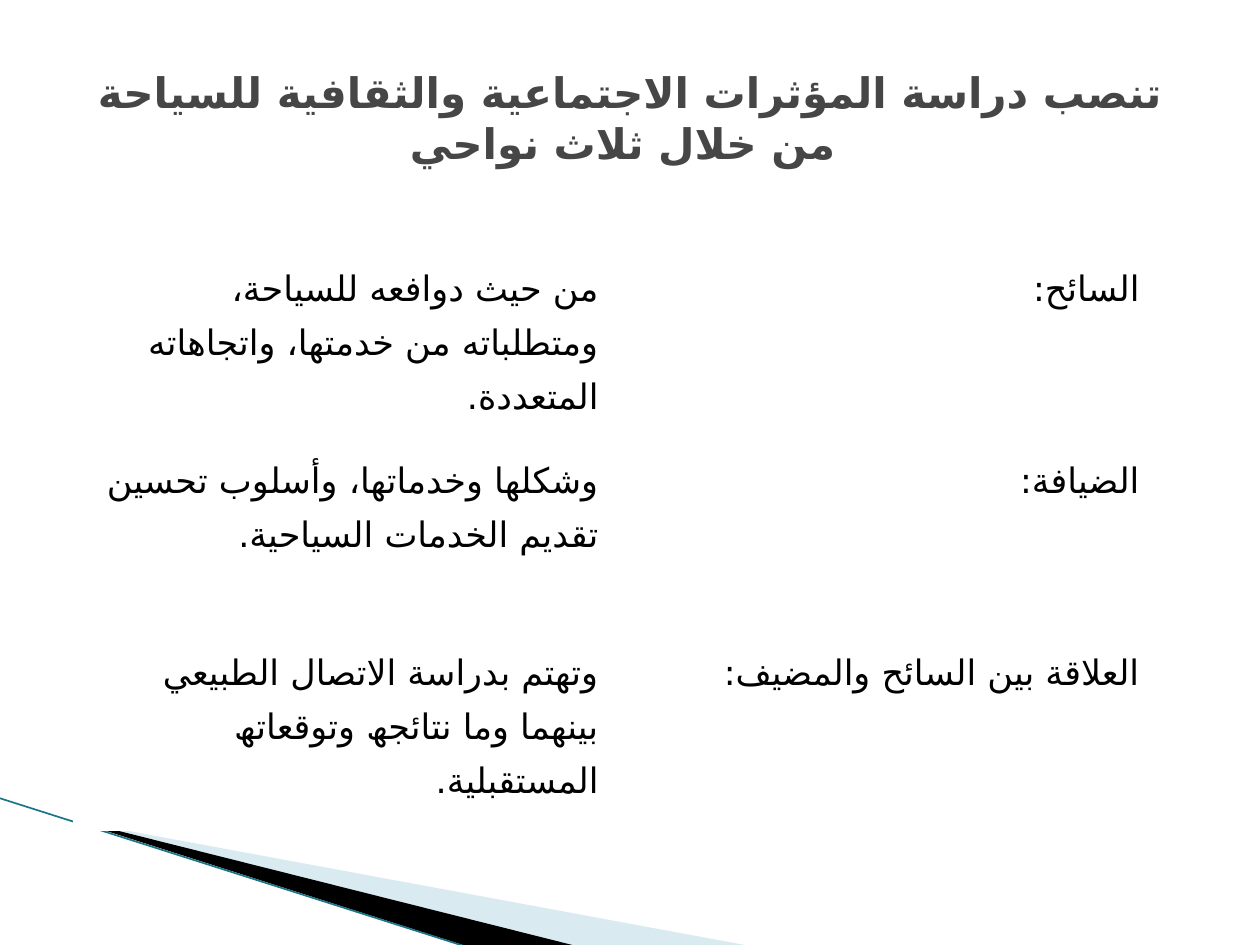
from lxml import etree
from pptx import Presentation, util as u
from pptx.dml.color import RGBColor
from pptx.enum import shapes, text
from pptx.oxml import ns

PX = u.Inches(1) / 126
FONT = "Noto Sans Mono"
ARABIC_FONT = "DejaVu Sans"
WHITE = RGBColor(0xFF, 0xFF, 0xFF)
BLACK = RGBColor(0, 0, 0)
GREY = RGBColor(0x46, 0x46, 0x46)
PALE_BLUE = RGBColor(0xA0, 0xCB, 0xDC)
TEAL = RGBColor(0x1B, 0x75, 0x87)

TITLE = "تنصب دراسة المؤثرات الاجتماعیة والثقافیة للسیاحة من خلال ثلاث نواحي "
ASPECTS = [
    ("من حیث دوافعه للسیاحة، ومتطلباته من خدمتھا، واتجاھاته المتعددة.", "السائح:"),
    ("وشكلھا وخدماتھا، وأسلوب تحسین تقدیم الخدمات السیاحیة.", "الضیافة:"),
    ("وتھتم بدراسة الاتصال الطبیعي بینھما وما نتائجھ وتوقعاتھ المستقبلیة.",
     "العلاقة بین السائح والمضیف:"),
]


def px(count):
    """Turn pixels into EMU."""
    return u.Emu(round(count * PX))


def add_child(parent, tag, **attributes):
    """Append a drawing element with its attributes."""
    child = etree.SubElement(parent, ns.qn(tag))
    for name, value in attributes.items():
        child.set(name, str(value))
    return child


def style_para(para, size, color, bold=False):
    """Set the Latin and Arabic font of a paragraph."""
    font = para.font
    font.size, font.bold, font.name = u.Pt(size), bold, FONT
    font.color.rgb = color
    props = para._p.get_or_add_pPr().find(ns.qn("a:defRPr"))
    add_child(props, "a:cs", typeface=ARABIC_FONT)


def add_wedge(page, points, color, opacity=100):
    """Draw a filled outline through the points."""
    builder = page.shapes.build_freeform(*points[0], scale=PX)
    builder.add_line_segments(points[1:], close=True)
    wedge = builder.convert_to_shape()
    wedge.shadow.inherit = False
    wedge.line.fill.background()
    wedge.fill.solid()
    wedge.fill.fore_color.rgb = color
    if opacity < 100:
        tone = wedge._element.spPr.find(".//" + ns.qn("a:srgbClr"))
        add_child(tone, "a:alpha", val=opacity * 1000)


def add_line(page, start, end, color, width):
    """Draw a straight line without a shadow."""
    line = page.shapes.add_connector(
        shapes.MSO_CONNECTOR.STRAIGHT, *map(px, start + end))
    line.line.color.rgb = color
    line.line.width = u.Pt(width)
    add_child(line._element.spPr, "a:effectLst")


def add_title(page):
    """Write the centred heading."""
    box = page.shapes.add_textbox(px(63), px(38), px(1134), px(158))
    frame = box.text_frame
    frame.word_wrap = True
    frame.vertical_anchor = text.MSO_ANCHOR.MIDDLE
    para = frame.paragraphs[0]
    para.text = TITLE
    para.alignment = text.PP_ALIGN.CENTER
    style_para(para, 24, GREY, bold=True)


def fill_cell(cell, wording, bottom_width):
    """Write one right-to-left cell with white fill and borders."""
    cell.margin_left, cell.margin_right = u.Inches(0.22), u.Inches(0.07)
    cell.margin_top, cell.margin_bottom = u.Inches(0.01), 0
    props = cell._tc.get_or_add_tcPr()
    for side, width in (("L", 1), ("R", 1), ("T", 1), ("B", bottom_width)):
        border = add_child(props, f"a:ln{side}", w=u.Pt(width))
        add_child(add_child(border, "a:solidFill"), "a:srgbClr", val=WHITE)
    cell.fill.solid()
    cell.fill.fore_color.rgb = WHITE
    para = cell.text_frame.paragraphs[0]
    para.text = wording
    para.alignment = text.PP_ALIGN.RIGHT
    para.line_spacing = 1.33
    para.space_after = u.Pt(1.4)
    layout = para._p.get_or_add_pPr()
    for name, value in (("marL", u.Inches(0.06)), ("indent", 0), ("rtl", 1)):
        layout.set(name, str(value))
    add_child(add_child(layout, "a:tabLst"), "a:tab", pos=0, algn="r")
    style_para(para, 20, BLACK)


def add_aspects(page):
    """Build the table of the three aspects."""
    frame = page.shapes.add_table(
        len(ASPECTS), 2, px(74), px(254), px(1082), px(192 * len(ASPECTS)))
    table = frame.table
    table.first_row = table.horz_banding = False
    for row, wordings in enumerate(ASPECTS):
        for column, wording in enumerate(wordings):
            fill_cell(table.cell(row, column), wording, 3 if row == 0 else 1)


def main():
    """Build the slide and save it."""
    deck = Presentation()
    deck.slide_width, deck.slide_height = px(1260), px(945)
    page = deck.slides.add_slide(deck.slide_layouts[6])
    add_wedge(page, [(69, 820), (750, 946), (575, 946), (69, 819)], PALE_BLUE, 40)
    add_wedge(page, [(75, 820), (576, 946), (469, 947), (75, 821)], BLACK)
    add_line(page, (-1, 798), (467, 947), TEAL, 0.95)
    add_aspects(page)
    add_title(page)
    deck.save("out.pptx")


if __name__ == "__main__":
    main()
